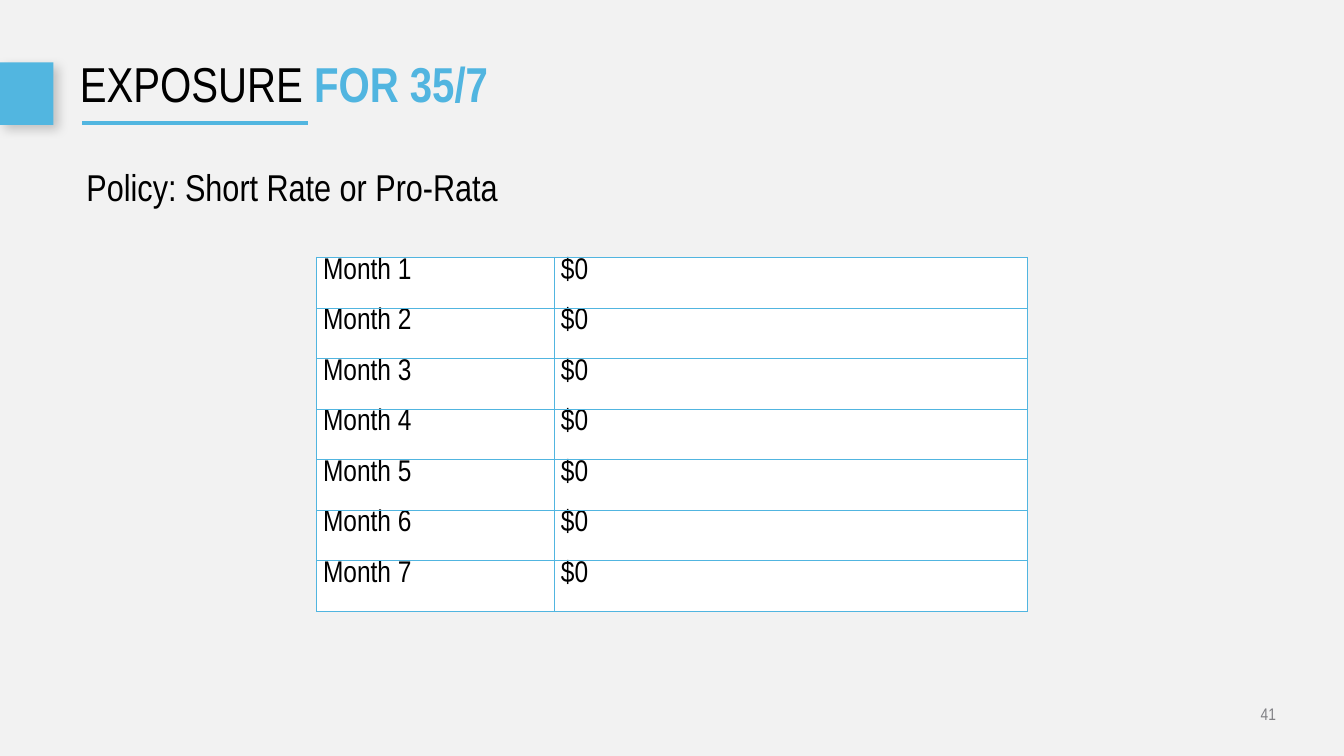
from lxml import etree
from pptx import Presentation
from pptx.dml.color import RGBColor
from pptx.enum.shapes import MSO_CONNECTOR, MSO_SHAPE
from pptx.enum.text import MSO_ANCHOR, PP_ALIGN
from pptx.oxml import parse_xml
from pptx.oxml.ns import qn
from pptx.util import Cm, Pt

STRAIGHT = MSO_CONNECTOR.STRAIGHT
RECTANGLE = MSO_SHAPE.RECTANGLE
MIDDLE = MSO_ANCHOR.MIDDLE
TOP = MSO_ANCHOR.TOP
LEFT = PP_ALIGN.LEFT
RIGHT = PP_ALIGN.RIGHT
NAMESPACE = "http://schemas.openxmlformats.org/drawingml/2006/main"
TITLE_ONLY = 5


def color(value):
    return RGBColor.from_string(value)


class Deck:
    font = "Arial Narrow"
    ink = "000000"
    accent = "51B5E0"
    bar = "52B6E0"
    muted = "808084"
    paper = "F2F2F2"
    white = "FFFFFF"

    def __init__(self, width, height):
        self.presentation = Presentation()
        self.presentation.slide_width = Cm(width)
        self.presentation.slide_height = Cm(height)
        layout = self.presentation.slide_layouts[TITLE_ONLY]
        self.slide = self.presentation.slides.add_slide(layout)
        fill = self.slide.background.fill
        fill.solid()
        fill.fore_color.rgb = color(self.paper)

    def style(self, run, size, hue, bold=False):
        run.font.name = self.font
        run.font.size = Pt(size)
        run.font.bold = bold
        run.font.color.rgb = color(hue)

    def frame(self, frame, anchor, side=0, edge=0):
        frame.word_wrap = True
        frame.vertical_anchor = anchor
        frame.margin_left = frame.margin_right = Cm(side)
        frame.margin_top = frame.margin_bottom = Cm(edge)

    def title(self, left, top, width, height, parts):
        title = self.slide.shapes.title
        title.left, title.top = Cm(left), Cm(top)
        title.width, title.height = Cm(width), Cm(height)
        self.frame(title.text_frame, MIDDLE)
        paragraph = title.text_frame.paragraphs[0]
        paragraph.alignment = LEFT
        paragraph.line_spacing = 0.9
        for wording, hue, bold in parts:
            run = paragraph.add_run()
            run.text = wording
            self.style(run, 52.5, hue, bold)

    def text(self, left, top, width, height, wording, size, hue,
             anchor=TOP, align=LEFT, side=0, edge=0):
        box = self.slide.shapes.add_textbox(Cm(left), Cm(top), Cm(width), Cm(height))
        self.frame(box.text_frame, anchor, side, edge)
        box.text_frame.text = wording
        paragraph = box.text_frame.paragraphs[0]
        paragraph.alignment = align
        self.style(paragraph.runs[0], size, hue)

    def block(self, left, top, width, height):
        block = self.slide.shapes.add_shape(
            RECTANGLE, Cm(left), Cm(top), Cm(width), Cm(height))
        block.shadow.inherit = False
        block.fill.solid()
        block.fill.fore_color.rgb = color(self.bar)
        block.line.fill.background()
        effects = block._element.spPr.find(qn("a:effectLst"))
        effects.append(parse_xml(
            f'<a:outerShdw xmlns:a="{NAMESPACE}" blurRad="{Pt(12)}" dist="{Pt(7)}" '
            f'dir="2700000" algn="tl" rotWithShape="0"><a:srgbClr val="{self.ink}">'
            '<a:alpha val="20000"/></a:srgbClr></a:outerShdw>'))

    def rule(self, left, top, right):
        rule = self.slide.shapes.add_connector(
            STRAIGHT, Cm(left), Cm(top), Cm(right), Cm(top))
        rule.line.color.rgb = color(self.bar)
        rule.line.width = Pt(5)
        etree.SubElement(rule._element.spPr, qn("a:effectLst"))

    def borders(self, cell):
        properties = cell._tc.get_or_add_tcPr()
        for position, side in enumerate(("lnL", "lnR", "lnT", "lnB")):
            properties.insert(position, parse_xml(
                f'<a:{side} xmlns:a="{NAMESPACE}" w="{Pt(1)}"><a:solidFill>'
                f'<a:srgbClr val="{self.accent}"/></a:solidFill></a:{side}>'))

    def table(self, left, top, widths, row_height, rows):
        table = self.slide.shapes.add_table(
            len(rows), len(widths), Cm(left), Cm(top),
            Cm(sum(widths)), Cm(row_height * len(rows))).table
        table.first_row = False
        table.horz_banding = False
        for column, width in zip(table.columns, widths):
            column.width = Cm(width)
        for row, wordings in zip(table.rows, rows):
            row.height = Cm(row_height)
            for cell, wording in zip(row.cells, wordings):
                cell.fill.solid()
                cell.fill.fore_color.rgb = color(self.white)
                cell.margin_left = cell.margin_right = Cm(0.25)
                cell.margin_top = cell.margin_bottom = Cm(0)
                cell.vertical_anchor = TOP
                cell.text_frame.text = wording
                self.style(cell.text_frame.paragraphs[0].runs[0], 32, self.ink)
                self.borders(cell)


def main():
    deck = Deck(50.8, 28.58)
    deck.block(0, 2.36, 2.02, 2.36)
    deck.rule(3.1, 4.65, 11.66)
    deck.title(3.02, 1.5, 45.21, 3.58, [
        ("EXPOSURE", deck.ink, False),
        (" FOR 35/7", deck.accent, True),
    ])
    deck.text(36.8, 26.49, 11.43, 0.97, "41", 18, deck.muted, MIDDLE, RIGHT)
    exposure = [(f"Month {month}", "$0") for month in range(1, 8)]
    deck.table(11.96, 9.73, (8.99, 17.88), 1.91, exposure)
    deck.text(3.02, 6.07, 17.04, 1.96, "Policy: Short Rate or Pro-Rata", 40,
              deck.ink, side=0.25, edge=0.13)
    deck.presentation.save("out.pptx")


if __name__ == "__main__":
    main()
